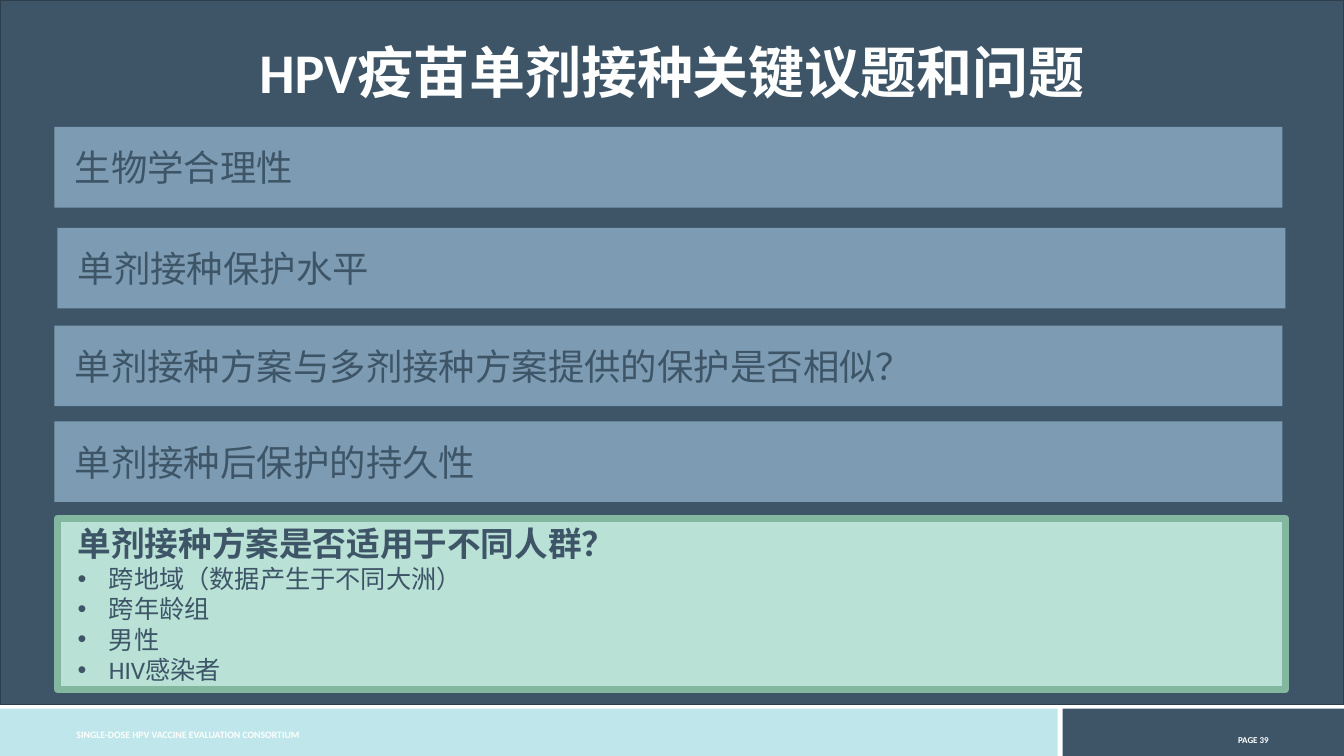
"""Build the slide on key topics and questions for single-dose HPV vaccination."""
import pptx
import pptx.util
from pptx.dml.color import RGBColor
from pptx.enum.lang import MSO_LANGUAGE_ID
from pptx.enum.shapes import MSO_SHAPE
from pptx.enum.text import MSO_ANCHOR, PP_ALIGN
from pptx.oxml.ns import qn
from lxml import etree

Inches = pptx.util.Inches
Pt = pptx.util.Pt

THEME = {
    "navy": "3D5567", "navy_edge": "2D3F4C", "aqua": "BFE6EA", "white": "FFFFFF",
    "bar": "7D9BB2", "mint": "B9E1D6", "green": "84B7A0",
    "latin": "Calibri", "chinese": "Noto Sans CJK SC",
    "title": 40, "topic": 26, "question": 24, "bullet": 18, "footer": 7, "page": 11,
}


def add_box(left, top, width, height, fill, edge=None, edge_width=1):
    shape = slide.shapes.add_shape(
        MSO_SHAPE.RECTANGLE, Inches(left), Inches(top), Inches(width), Inches(height))
    shape.shadow.inherit = False
    shape.fill.solid()
    shape.fill.fore_color.rgb = RGBColor.from_string(THEME[fill])
    if edge:
        shape.line.color.rgb = RGBColor.from_string(THEME[edge])
        shape.line.width = Pt(edge_width)
    else:
        shape.line.fill.background()
    frame = shape.text_frame
    frame.word_wrap = True
    frame.vertical_anchor = MSO_ANCHOR.MIDDLE
    frame.margin_left = Inches(0.2)
    return shape


def write(paragraph, text, size, color, bold=False, align=PP_ALIGN.LEFT, latin="latin"):
    paragraph.text = text
    paragraph.alignment = align
    run = paragraph.runs[0]
    run.font.size = Pt(THEME[size])
    run.font.bold = bold
    run.font.name = THEME[latin]
    run.font.color.rgb = RGBColor.from_string(THEME[color])
    if not text.isascii():
        run.font.language_id = MSO_LANGUAGE_ID.SIMPLIFIED_CHINESE
        east_asian = etree.SubElement(run.font._element, qn("a:ea"))
        east_asian.set("typeface", THEME["chinese"])
    return run


presentation = pptx.Presentation()
presentation.slide_width = Inches(13.33)
presentation.slide_height = Inches(7.5)
slide = presentation.slides.add_slide(presentation.slide_layouts[6])

add_box(0, 7.03, 10.49, 0.47, "aqua")
add_box(10.54, 7.03, 2.79, 0.47, "navy")
add_box(0, 0, 13.33, 6.99, "navy", "navy_edge")

labels = [
    ("SINGLE-DOSE HPV VACCINE EVALUATION CONSORTIUM", (0.66, 7.18, 4.35, 0.22),
     "footer", PP_ALIGN.LEFT, MSO_ANCHOR.MIDDLE),
    ("PAGE 39", (11.07, 7.22, 1.61, 0.22), "page", PP_ALIGN.RIGHT, MSO_ANCHOR.TOP),
    ("HPV疫苗单剂接种关键议题和问题", (0.09, 0.4, 13.15, 0.95),
     "title", PP_ALIGN.CENTER, MSO_ANCHOR.TOP),
]
for text, place, size, align, anchor in labels:
    label = slide.shapes.add_textbox(*map(Inches, place))
    label.text_frame.word_wrap = True
    label.text_frame.vertical_anchor = anchor
    paragraph = label.text_frame.paragraphs[0]
    run = write(paragraph, text, size, "white", True, align)
    if size == "page":
        run.font._element.set("baseline", "30000")
    if size == "title":
        paragraph.line_spacing = 0.9

topics = [
    ("生物学合理性", 0.54, 1.26, "chinese"),
    ("单剂接种保护水平", 0.57, 2.26, "latin"),
    ("单剂接种方案与多剂接种方案提供的保护是否相似？", 0.54, 3.23, "chinese"),
    ("单剂接种后保护的持久性", 0.54, 4.18, "chinese"),
]
for text, left, top, latin in topics:
    bar = add_box(left, top, 12.18, 0.8, "bar")
    write(bar.text_frame.paragraphs[0], text, "topic", "navy", latin=latin)

question_box = add_box(0.57, 5.14, 12.18, 1.7, "mint", "green", 5)
question_frame = question_box.text_frame
write(question_frame.paragraphs[0], "单剂接种方案是否适用于不同人群？", "question", "navy", True)
for text in ["跨地域（数据产生于不同大洲）", "跨年龄组", "男性", "HIV感染者"]:
    paragraph = question_frame.add_paragraph()
    properties = paragraph._p.get_or_add_pPr()
    properties.set("marL", str(Inches(0.31)))
    properties.set("indent", str(-Inches(0.31)))
    etree.SubElement(properties, qn("a:buFont")).set("typeface", "Arial")
    etree.SubElement(properties, qn("a:buChar")).set("char", "•")
    write(paragraph, text, "bullet", "navy")

presentation.save("out.pptx")
